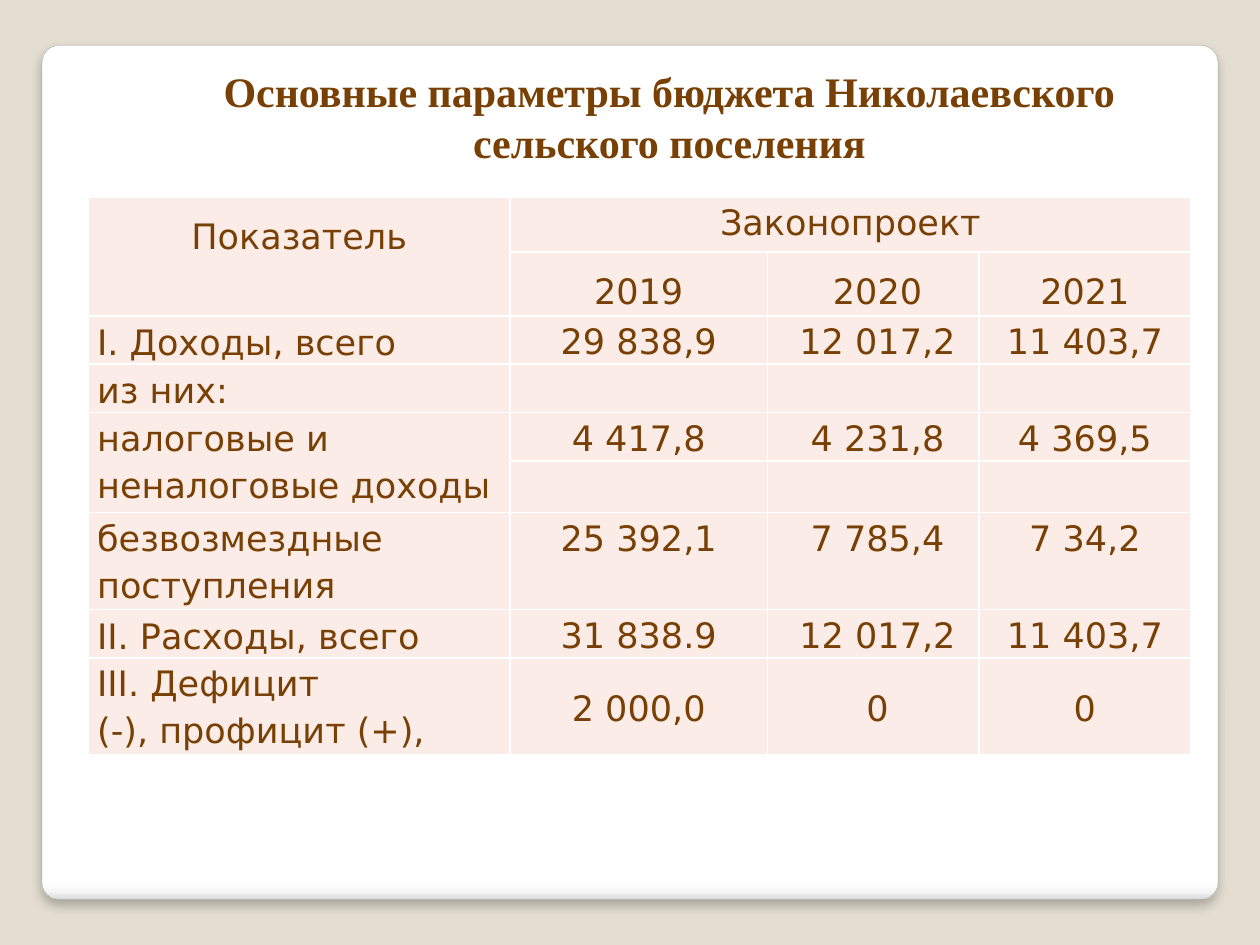
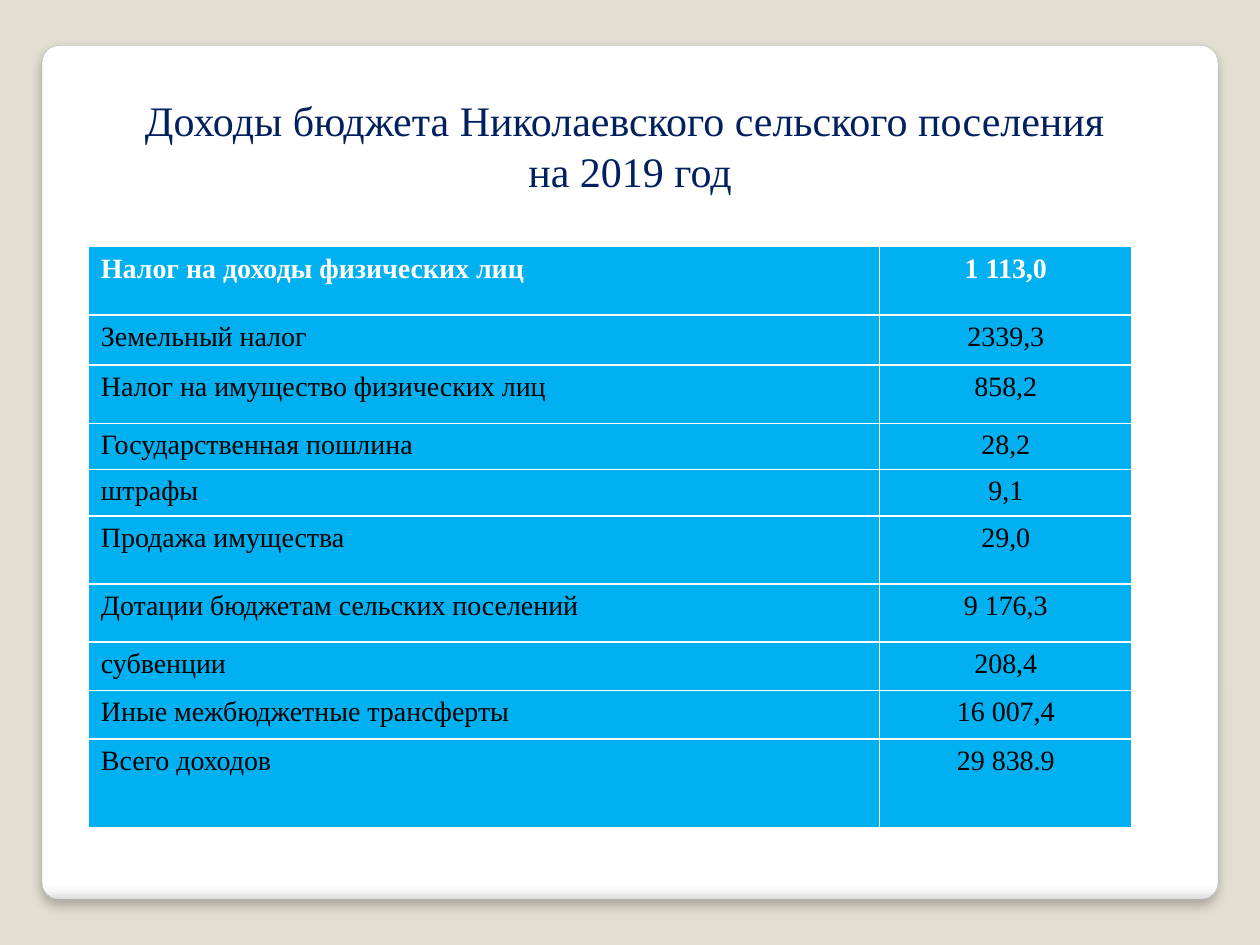
from pptx import Presentation
from pptx.dml.color import RGBColor
from pptx.enum.shapes import MSO_SHAPE
from pptx.enum.text import MSO_ANCHOR, PP_ALIGN
from pptx.oxml import parse_xml
from pptx.oxml.ns import nsdecls
from pptx.util import Pt

SAND, GREY, WHITE, BLACK = "E3DED1", "A4A4A4", "FFFFFF", "000000"
BROWN, NAVY, PINK, BLUE = "784004", "002060", "FCECE7", "00B0F0"
SERIF, SANS = "Times New Roman", "DejaVu Sans"


def color(code):
    return RGBColor.from_string(code)


def style(frame, face, size, code, bold=False, align=PP_ALIGN.CENTER, space=None):
    for para in frame.paragraphs:
        para.alignment = align
        para.line_spacing = space
        for run in para.runs:
            run.font.name = face
            run.font.size = Pt(size)
            run.font.bold = bold
            run.font.color.rgb = color(code)


stops = [(0, WHITE), (98, WHITE), (99, "F7F7F7"), (100, "DADADA")]
marks = "".join(f'<a:gs pos="{pos * 1000}"><a:srgbClr val="{code}"/></a:gs>' for pos, code in stops)
fade = f'<a:gradFill {nsdecls("a")}><a:gsLst>{marks}</a:gsLst><a:lin ang="5400000" scaled="0"/></a:gradFill>'
shade = (
    f'<a:effectLst {nsdecls("a")}><a:outerShdw blurRad="{Pt(6)}" dist="{Pt(4)}" dir="5400000" '
    f'algn="t" rotWithShape="0"><a:srgbClr val="{BLACK}"><a:alpha val="25000"/></a:srgbClr>'
    '</a:outerShdw></a:effectLst>'
)

titles = [
    ("Основные параметры бюджета Николаевского сельского поселения", 78.5, 34, 65.5, BROWN, True),
    ("Доходы бюджета Николаевского сельского поселения \nна 2019 год", 56, 50.5, 472, NAVY, False),
]

deck = Presentation()
deck.slide_width, deck.slide_height = Pt(720), Pt(540)
slides = []
for text, left, top, height, code, bold in titles:
    slide = deck.slides.add_slide(deck.slide_layouts[6])
    slides.append(slide)
    slide.background.fill.solid()
    slide.background.fill.fore_color.rgb = color(SAND)

    panel = slide.shapes.add_shape(MSO_SHAPE.ROUNDED_RECTANGLE, Pt(24), Pt(26), Pt(672), Pt(488))
    panel.adjustments[0] = 0.02
    panel.line.color.rgb = color(GREY)
    panel.line.width = Pt(0.16)
    props = panel.element.spPr
    props.insert(2, parse_xml(fade))
    props.append(parse_xml(shade))

    title = slide.shapes.add_textbox(Pt(left), Pt(top), Pt(608), Pt(height))
    title.text_frame.word_wrap = True
    title.text_frame.text = text
    style(title.text_frame, SERIF, 24, code, bold)

budget = [
    ("Показатель", "Законопроект", "", ""),
    ("", "2019", "2020", "2021"),
    ("I. Доходы, всего", "29 838,9", "12 017,2", "11 403,7"),
    ("из них:", "", "", ""),
    ("налоговые и неналоговые доходы", "4 417,8", "4 231,8", "4 369,5"),
    ("", "", "", ""),
    ("безвозмездные поступления", "25 392,1", "7 785,4", "7 34,2"),
    ("II. Расходы, всего", "31 838.9", "12 017,2", "11 403,7"),
    ("III. Дефицит\n(-), профицит (+),", "2 000,0", "0", "0"),
]
income = [
    ("Налог на доходы физических лиц", "1 113,0"),
    ("Земельный налог", "2339,3"),
    ("Налог на имущество физических лиц", "858,2"),
    ("Государственная пошлина", "28,2"),
    ("штрафы", "9,1"),
    ("Продажа имущества", "29,0"),
    ("Дотации бюджетам сельских поселений", "9 176,3"),
    ("субвенции", "208,4"),
    ("Иные межбюджетные трансферты", "16 007,4"),
    ("Всего доходов", "29 838.9"),
]
plans = [
    (budget, 112.5, [241, 147, 121, 121], [31.5, 36.5, 27.5, 27.5, 27.5, 29.5, 55.5, 27.5, 55.5], PINK),
    (income, 141, [452, 144.5], [39, 28.5, 33.5, 26.3, 26.3, 39, 33, 27.8, 27.8, 50.5], BLUE),
]

grids = []
for slide, (data, top, widths, heights, back) in zip(slides, plans):
    frame = slide.shapes.add_table(
        len(data), len(widths), Pt(50.5), Pt(top), Pt(sum(widths)), Pt(sum(heights)))
    grid = frame.table
    grids.append(grid)
    grid.horz_banding = False
    for col, width in zip(grid.columns, widths):
        col.width = Pt(width)
    for row, height in zip(grid.rows, heights):
        row.height = Pt(height)
    for row, texts in enumerate(data):
        for col, text in enumerate(texts):
            cell = grid.cell(row, col)
            cell.text_frame.text = text
            cell.fill.solid()
            cell.fill.fore_color.rgb = color(back)

main, detail = grids
main.first_row = False
for row in range(len(budget)):
    for col in range(4):
        cell = main.cell(row, col)
        cell.margin_left = cell.margin_right = Pt(5)
        cell.margin_top = cell.margin_bottom = 0
        align = PP_ALIGN.LEFT if col == 0 and row > 1 else PP_ALIGN.CENTER
        tall = row == 1 or (row, col) == (0, 0)
        style(cell.text_frame, SANS, 20, BROWN, False, align, 1.5 if tall else 1.15)
        if col == 0 and row in (2, 3, 7) or col > 0 and row == 8:
            cell.vertical_anchor = MSO_ANCHOR.MIDDLE
        if col == 2 and row > 0:
            cell.text_frame.paragraphs[0]._p.get_or_add_pPr().set("indent", str(Pt(5)))
main.cell(0, 0).merge(main.cell(1, 0))
main.cell(0, 1).merge(main.cell(0, 3))
main.cell(4, 0).merge(main.cell(5, 0))

for row in range(len(income)):
    for col, align in enumerate((PP_ALIGN.LEFT, PP_ALIGN.CENTER)):
        head = row == 0
        style(detail.cell(row, col).text_frame, SERIF, 16, WHITE if head else BLACK, head, align)

deck.save("out.pptx")
